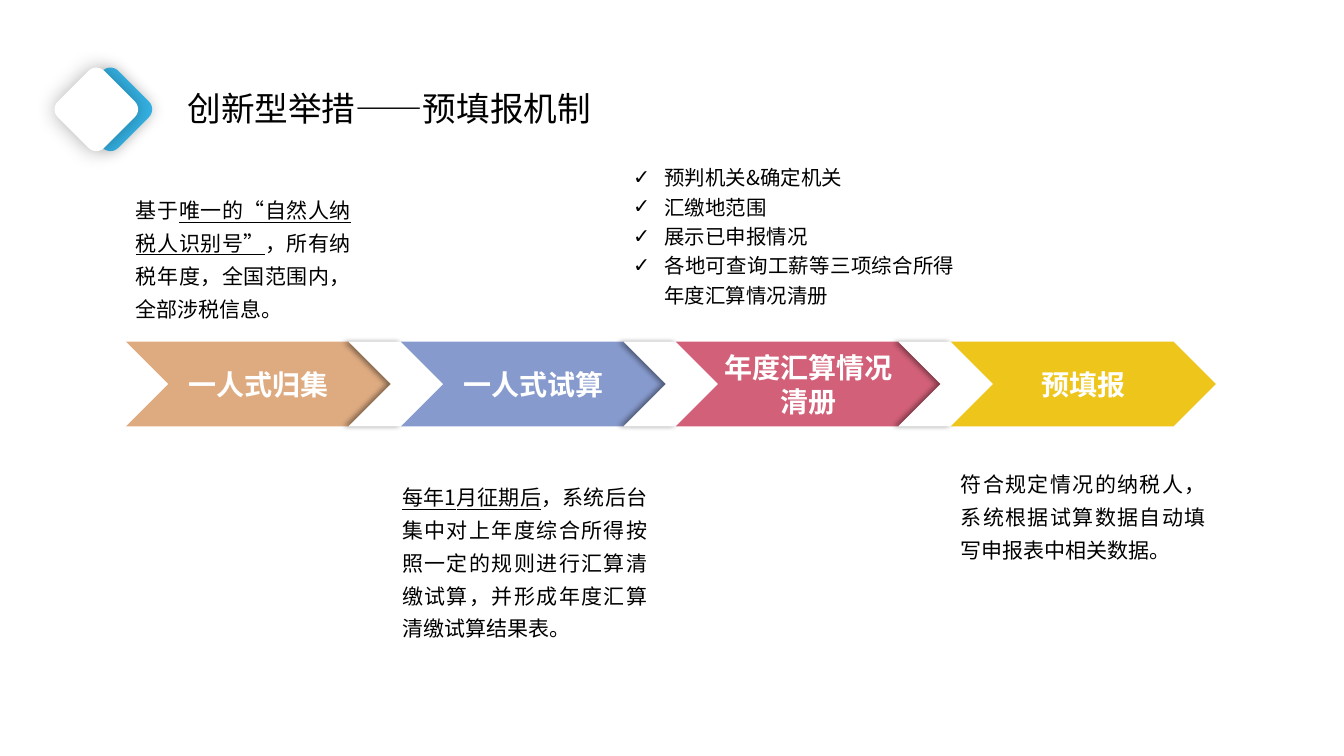
"""Build the slide on the pre-filled tax return mechanism."""
from lxml import etree
from pptx import Presentation
from pptx.dml.color import RGBColor
from pptx.enum.shapes import MSO_SHAPE
from pptx.enum.text import MSO_ANCHOR, MSO_AUTO_SIZE, PP_ALIGN
from pptx.oxml.ns import qn
from pptx.util import Inches, Pt

CHEVRON, ROUNDED = MSO_SHAPE.CHEVRON, MSO_SHAPE.ROUNDED_RECTANGLE
TOP, MIDDLE, BOTTOM = MSO_ANCHOR.TOP, MSO_ANCHOR.MIDDLE, MSO_ANCHOR.BOTTOM
LEFT, CENTER, JUSTIFY = PP_ALIGN.LEFT, PP_ALIGN.CENTER, PP_ALIGN.JUSTIFY
FIXED = MSO_AUTO_SIZE.NONE
TITLE_AND_CONTENT = 1

STEPS = [("一人式归集", "DEAB81"), ("一人式试算", "869ACD"),
         ("年度汇算情况清册", "D26078"), ("预填报", "EDC51B")]
CHECKS = ["预判机关&确定机关", "汇缴地范围", "展示已申报情况",
          "各地可查询工薪等三项综合所得年度汇算情况清册"]
NOTES = [
    ((1.25, 1.84, 2.33, 1.42), TOP,
     [("基于", False), ("唯一的“自然人纳税人识别号”", True),
      ("，所有纳税年度，全国范围内，全部涉税信息。", False)]),
    ((3.89, 4.35, 2.63, 2.06), BOTTOM,
     [("每年1月征期后", True),
      ("，系统后台集中对上年度综合所得按照一定的规则进行汇算清缴试算，"
       "并形成年度汇算清缴试算结果表。", False)]),
    ((9.43, 4.35, 2.63, 1.28), BOTTOM,
     [("符合规定情况的纳税人，系统根据试算数据自动填写申报表中相关数据。", False)]),
]
FIRST_STEP, STEP_PITCH = 1.25, (9.43 - 1.25) / 3
BAND_TOP, BAND_HEIGHT = 3.39, 0.84


def color(value):
    return RGBColor.from_string(value)


def add_span(para, text, font="Noto Sans CJK SC", size=15, fill="000000",
             bold=False, underline=False):
    span = para.add_run()
    span.text = text
    span.font.name, span.font.size = font, Pt(size)
    span.font.bold, span.font.underline = bold, underline
    span.font.color.rgb = color(fill)
    east_asian = etree.Element(qn("a:ea"), typeface="Noto Sans CJK SC")
    span.font._element.find(qn("a:latin")).addnext(east_asian)


class Page:
    """Holds the deck's current slide and adds styled elements to it."""

    def __init__(self, deck):
        self.slide = deck.slides.add_slide(deck.slide_layouts[TITLE_AND_CONTENT])
        self.shapes = self.slide.shapes

    def place(self, box, area, anchor):
        box.left, box.top, box.width, box.height = map(Inches, area)
        frame = box.text_frame
        frame.word_wrap, frame.auto_size = True, FIXED
        frame.vertical_anchor = anchor
        return frame

    def title(self, text, area):
        para = self.place(self.shapes.title, area, TOP).paragraphs[0]
        para.alignment, para.line_spacing = LEFT, 1.5
        add_span(para, text, size=24)

    def checklist(self, items, area):
        frame = self.place(self.slide.placeholders[1], area, TOP)
        for index, item in enumerate(items):
            para = frame.add_paragraph() if index else frame.paragraphs[0]
            para.alignment, para.line_spacing = JUSTIFY, 1.2
            para.space_before = Pt(0)
            layout = para._p.get_or_add_pPr()
            layout.set("marL", str(Inches(0.31)))
            layout.set("indent", str(Inches(-0.31)))
            etree.SubElement(layout, qn("a:buChar"), char="✓")
            add_span(para, item, size=14.6)

    def note(self, spans, area, anchor):
        box = self.shapes.add_textbox(*map(Inches, area))
        para = self.place(box, area, anchor).paragraphs[0]
        para.alignment, para.line_spacing = JUSTIFY, 1.3
        for text, underline in spans:
            add_span(para, text, underline=underline)

    def shape(self, kind, area, fill, rotation=0, shadow=None):
        shape = self.shapes.add_shape(kind, *map(Inches, area))
        shape.rotation = rotation
        shape.fill.solid()
        shape.fill.fore_color.rgb = color(fill)
        shape.line.fill.background()
        shape.shadow.inherit = False
        if shadow:
            self.cast_shadow(shape, *shadow)
        return shape

    def cast_shadow(self, shape, opacity, blur, distance, angle):
        effects = shape._element.spPr.find(qn("a:effectLst"))
        outer = etree.SubElement(
            effects, qn("a:outerShdw"), blurRad=str(Pt(blur)),
            dist=str(Pt(distance)), dir=str(angle * 60000),
            algn="ctr", rotWithShape="0")
        tint = etree.SubElement(outer, qn("a:srgbClr"), val="000000")
        etree.SubElement(tint, qn("a:alpha"), val=str(opacity * 1000))

    def step(self, text, left, fill):
        area = (left, BAND_TOP, 2.63, BAND_HEIGHT)
        frame = self.place(self.shape(CHEVRON, area, fill), area, MIDDLE)
        frame.margin_left = frame.margin_right = 0
        frame.margin_top = frame.margin_bottom = 0
        para = frame.paragraphs[0]
        para.alignment = CENTER
        add_span(para, text, font="Arial", size=20, fill="FFFFFF", bold=True)


def main():
    deck = Presentation()
    deck.slide_width, deck.slide_height = Inches(13.33), Inches(7.5)
    page = Page(deck)
    page.title("创新型举措——预填报机制", (1.76, 0.62, 5.59, 0.7))
    page.checklist(CHECKS, (6.18, 1.54, 3.39, 1.72))
    for index, (text, fill) in enumerate(STEPS):
        left = FIRST_STEP + index * STEP_PITCH
        if index:
            gap = (left - 0.52, BAND_TOP, 0.95, BAND_HEIGHT)
            page.shape(CHEVRON, gap, "FFFFFF", shadow=(40, 4, 3, 180))
        page.step(text, left, fill)
    for area, anchor, spans in NOTES:
        page.note(spans, area, anchor)
    for left, fill, shadow in [(0.77, "34B2E4", (20, 10, 0, 0)),
                               (0.63, "FFFFFF", (30, 15, 0, 0))]:
        page.shape(ROUNDED, (left, 0.76, 0.65, 0.65), fill, 45, shadow)
    deck.save("out.pptx")


if __name__ == "__main__":
    main()
